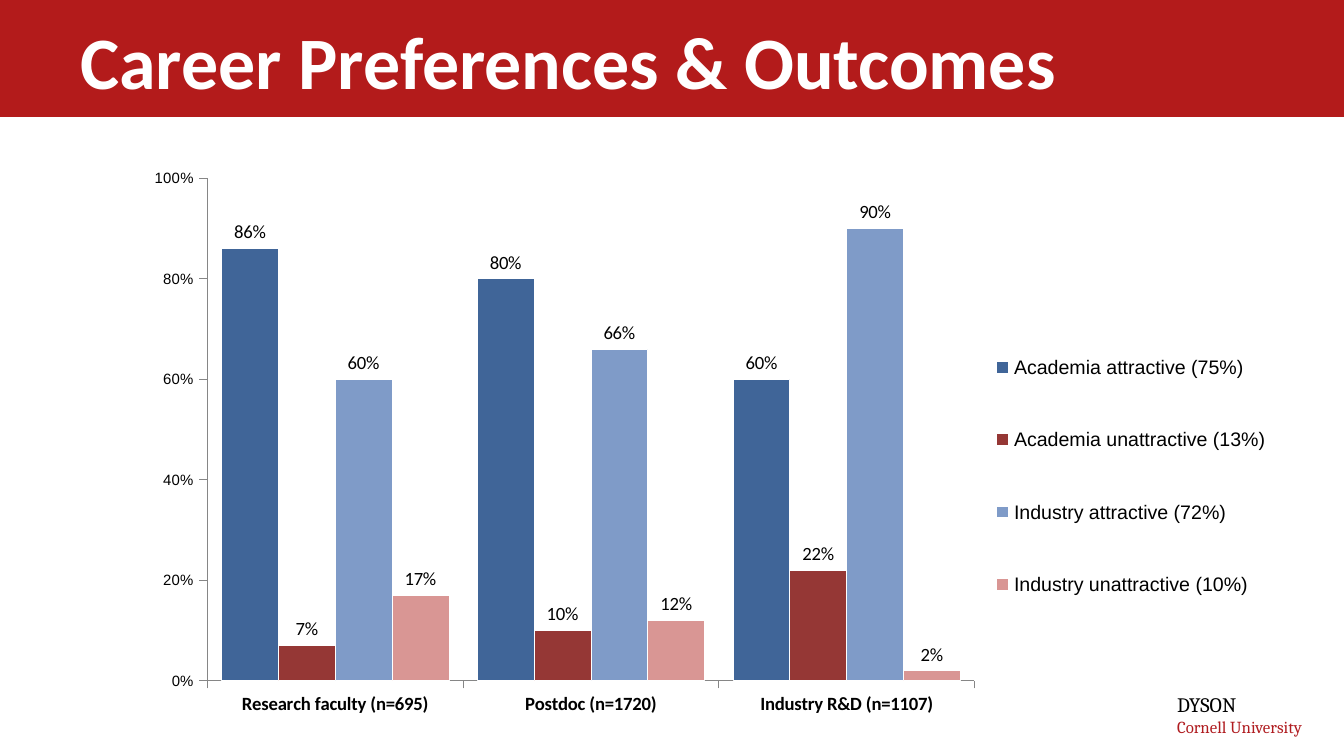
import pptx
import pptx.chart.data
import pptx.dml.color
import pptx.enum.chart
import pptx.enum.shapes
import pptx.enum.text
import pptx.oxml
import pptx.oxml.ns
import pptx.util

COLORS = {
    "banner": "B31B1B", "school": "B01C20", "white": "FFFFFF", "black": "000000",
    "axis": "868686",
}
CATEGORIES = ["Research faculty (n=695)", "Postdoc (n=1720)", "Industry R&D (n=1107)"]
SERIES = [
    ("Academia attractive (75%)", "406598", (0.86, 0.80, 0.60)),
    ("Academia unattractive (13%)", "953735", (0.07, 0.10, 0.22)),
    ("Industry attractive (72%)", "7F9BC8", (0.60, 0.66, 0.90)),
    ("Industry unattractive (10%)", "D99694", (0.17, 0.12, 0.02)),
]


def style(font, name, size, color="black", bold=False):
    values = {"name": name, "size": pptx.util.Pt(size), "bold": bold}
    for key, value in values.items():
        setattr(font, key, value)
    font.color.rgb = pptx.dml.color.RGBColor.from_string(COLORS[color])


def place(element, index, inner, **shares):
    """Position a chart part by shares of the chart area."""
    old = element.find(pptx.oxml.ns.qn("c:layout"))
    if old is not None:
        element.remove(old)
    target = '<c:layoutTarget val="inner"/>' if inner else ""
    modes = '<c:xMode val="edge"/><c:yMode val="edge"/>'
    sizes = "".join(f'<c:{key} val="{value}"/>' for key, value in shares.items())
    element.insert(index, pptx.oxml.parse_xml(
        f'<c:layout {pptx.oxml.ns.nsdecls("c")}><c:manualLayout>'
        f"{target}{modes}{sizes}</c:manualLayout></c:layout>"))


prs = pptx.Presentation()
prs.slide_width = pptx.util.Inches(10)
prs.slide_height = prs.slide_width * 9 // 16
W = prs.slide_width
s = prs.slides.add_slide(prs.slide_layouts[6])

# Banner and title
banner = s.shapes.add_shape(
    pptx.enum.shapes.MSO_SHAPE.RECTANGLE, 0, 0, W, pptx.util.Inches(0.87))
banner.shadow.inherit = False
banner.fill.solid()
banner.fill.fore_color.rgb = pptx.dml.color.RGBColor.from_string(COLORS["banner"])
banner.line.fill.background()

title = s.shapes.add_textbox(
    int(W * 0.05), pptx.util.Inches(0.07), int(W * 0.9), pptx.util.Inches(0.75))
tf = title.text_frame
tf.word_wrap = True
tf.vertical_anchor = pptx.enum.text.MSO_ANCHOR.MIDDLE
r = tf.paragraphs[0].add_run()
r.text = "Career Preferences & Outcomes"
style(r.font, "Calibri", 39.6, "white", True)

# School name
school = s.shapes.add_textbox(
    pptx.util.Inches(8.66), pptx.util.Inches(5.1),
    pptx.util.Inches(1.24), pptx.util.Inches(0.44))
tf = school.text_frame
tf.word_wrap = True
for i, (text, size, color) in enumerate([
        ("DYSON", 11, "black"), ("Cornell University", 9, "school")]):
    p = tf.add_paragraph() if i else tf.paragraphs[0]
    r = p.add_run()
    r.text = text
    style(r.font, "Cambria", size, color)

# Chart
data = pptx.chart.data.CategoryChartData(number_format="0%")
data.categories = CATEGORIES
for name, color, values in SERIES:
    data.add_series(name, values)
chart = s.shapes.add_chart(
    pptx.enum.chart.XL_CHART_TYPE.COLUMN_CLUSTERED,
    pptx.util.Inches(0.85), pptx.util.Inches(1.15),
    pptx.util.Inches(8.65), pptx.util.Inches(4.35), data).chart
chart.has_title = False
style(chart.font, "Calibri", 18)

plot = chart.plots[0]
plot.vary_by_categories = False
plot.gap_width = 50
plot.overlap = 0
for series, (name, color, values) in zip(plot.series, SERIES):
    series.format.fill.solid()
    series.format.fill.fore_color.rgb = pptx.dml.color.RGBColor.from_string(color)
    series.format.line.color.rgb = pptx.dml.color.RGBColor.from_string(COLORS["white"])
    series.format.line.width = pptx.util.Pt(0.25)
    labels = series.data_labels
    options = {
        "show_value": True, "number_format": "0%", "number_format_is_linked": False,
        "position": pptx.enum.chart.XL_LABEL_POSITION.OUTSIDE_END,
    }
    for key, value in options.items():
        setattr(labels, key, value)
    style(labels.font, "Calibri", 10)

for axis, font, size, bold in [
        (chart.category_axis, "Calibri", 10, True), (chart.value_axis, "Arial", 8, False)]:
    axis.has_major_gridlines = False
    axis.major_tick_mark = pptx.enum.chart.XL_TICK_MARK.OUTSIDE
    axis.minor_tick_mark = pptx.enum.chart.XL_TICK_MARK.NONE
    axis.format.line.color.rgb = pptx.dml.color.RGBColor.from_string(COLORS["axis"])
    axis.format.line.width = pptx.util.Pt(0.25)
    style(axis.tick_labels.font, font, size, bold=bold)
for key, value in {"minimum_scale": 0, "maximum_scale": 1, "major_unit": 0.2}.items():
    setattr(chart.value_axis, key, value)
chart.value_axis.tick_labels.number_format = "0%"
chart.value_axis.tick_labels.number_format_is_linked = False

chart.has_legend = True
chart.legend.position = pptx.enum.chart.XL_LEGEND_POSITION.RIGHT
chart.legend.include_in_layout = False
style(chart.legend.font, "Arial", 10.5)
place(chart._chartSpace.chart.plotArea, 0, True, x=0.08, y=0.04, w=0.66, h=0.86)
place(chart.legend._element, 1, False, x=0.75, y=0.26, w=0.25, h=0.58)

prs.save("out.pptx")
